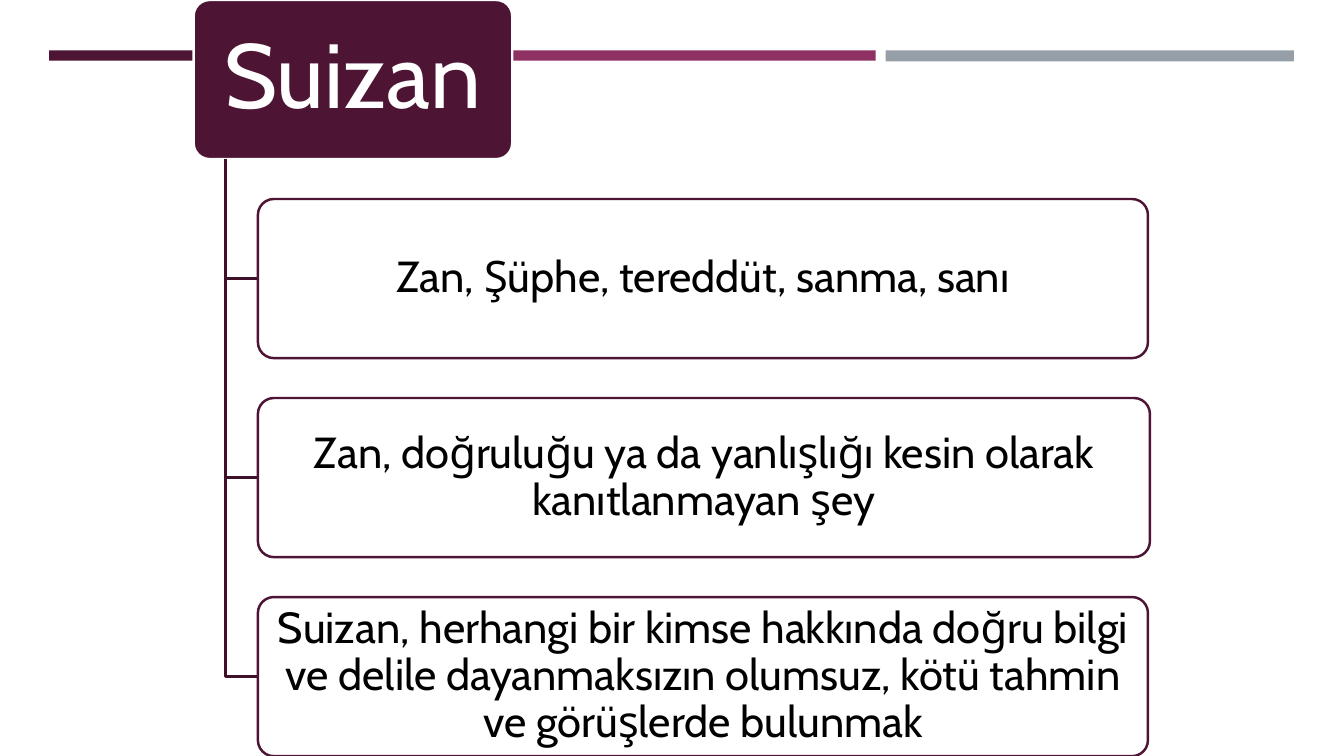
from pptx import Presentation
from pptx.dml.color import RGBColor
from pptx.enum.shapes import MSO_SHAPE
from pptx.enum.text import MSO_ANCHOR, PP_ALIGN
from pptx.util import Cm, Pt

RECT, ROUNDED = MSO_SHAPE.RECTANGLE, MSO_SHAPE.ROUNDED_RECTANGLE
MIDDLE, CENTER = MSO_ANCHOR.MIDDLE, PP_ALIGN.CENTER

PLUM, MAGENTA, GREY = "4D1434", "903163", "969FA7"
BRANCH, WHITE, BLACK = "3E102A", "FFFFFF", "000000"

BAR_LEFT, BAR_TOP, BAR_WIDTH, BAR_PITCH = 1.24, 1.27, 10.29, 10.54
BARS = [(PLUM, 0.26), (MAGENTA, 0.26), (GREY, 0.28)]

TERM_LEFT, TERM_WIDTH, BOX_HEIGHT = 4.88, 8.03, 4.01
TRUNK_X = TERM_LEFT + TERM_WIDTH / 10
MEANING_LEFT, MEANING_PITCH = 6.5, 5.015
MEANINGS = [
    ("Zan, Şüphe, tereddüt, sanma, sanı", 22.43),
    ("Zan, doğruluğu ya da yanlışlığı kesin olarak kanıtlanmayan şey", 22.48),
    ("Suizan, herhangi bir kimse hakkında doğru bilgi ve delile dayanmaksızın "
     "olumsuz, kötü tahmin ve görüşlerde bulunmak", 22.43),
]


def rgb(hex_color):
    return RGBColor.from_string(hex_color)


def write(shape, text, size, color, inset_x, inset_y):
    frame = shape.text_frame
    frame.word_wrap = True
    frame.vertical_anchor = MIDDLE
    frame.margin_left = frame.margin_right = Cm(inset_x)
    frame.margin_top = frame.margin_bottom = Cm(inset_y)
    paragraph = frame.paragraphs[0]
    paragraph.alignment = CENTER
    paragraph.line_spacing = 0.9
    run = paragraph.add_run()
    run.text = text
    run.font.name = SlideBuilder.font
    run.font.size = Pt(size)
    run.font.color.rgb = rgb(color)


class SlideBuilder:
    font = "Cabin"
    line_width = Pt(1.75)
    corner = 0.1

    def __init__(self, slide):
        self.shapes = slide.shapes

    def outline(self, shape, color):
        shape.line.color.rgb = rgb(color)
        shape.line.width = self.line_width

    def bar(self, left, top, width, height, color):
        bar = self.shapes.add_shape(RECT, Cm(left), Cm(top), Cm(width), Cm(height))
        bar.shadow.inherit = False
        bar.fill.solid()
        bar.fill.fore_color.rgb = rgb(color)
        bar.line.fill.background()

    def box(self, left, top, width, text, fill, line, **text_format):
        box = self.shapes.add_shape(ROUNDED, Cm(left), Cm(top), Cm(width), Cm(BOX_HEIGHT))
        box.adjustments[0] = self.corner
        box.shadow.inherit = False
        box.fill.solid()
        box.fill.fore_color.rgb = rgb(fill)
        self.outline(box, line)
        write(box, text, **text_format)

    def branch(self, x, top, end_x, end_y):
        """Draw an L-shaped line: down from (x, top), then right to the end."""
        builder = self.shapes.build_freeform(Cm(x), Cm(top))
        builder.add_line_segments([(Cm(x), Cm(end_y)), (Cm(end_x), Cm(end_y))], close=False)
        branch = builder.convert_to_shape()
        branch.shadow.inherit = False
        branch.fill.background()
        self.outline(branch, BRANCH)


def main():
    presentation = Presentation()
    presentation.slide_width, presentation.slide_height = Cm(33.87), Cm(19.05)
    builder = SlideBuilder(presentation.slides.add_slide(presentation.slide_layouts[6]))

    for column, (color, height) in enumerate(BARS):
        builder.bar(BAR_LEFT + column * BAR_PITCH, BAR_TOP, BAR_WIDTH, height, color)

    builder.box(TERM_LEFT, 0, TERM_WIDTH, "Suizan", PLUM, WHITE,
                size=65, color=WHITE, inset_x=0.36, inset_y=0.23)
    for row, (meaning, width) in enumerate(MEANINGS, start=1):
        top = row * MEANING_PITCH
        builder.branch(TRUNK_X, BOX_HEIGHT, MEANING_LEFT, top + BOX_HEIGHT / 2)
        builder.box(MEANING_LEFT, top, width, meaning, WHITE, PLUM,
                    size=31, color=BLACK, inset_x=0.15, inset_y=0.1)

    presentation.save("out.pptx")


if __name__ == "__main__":
    main()
